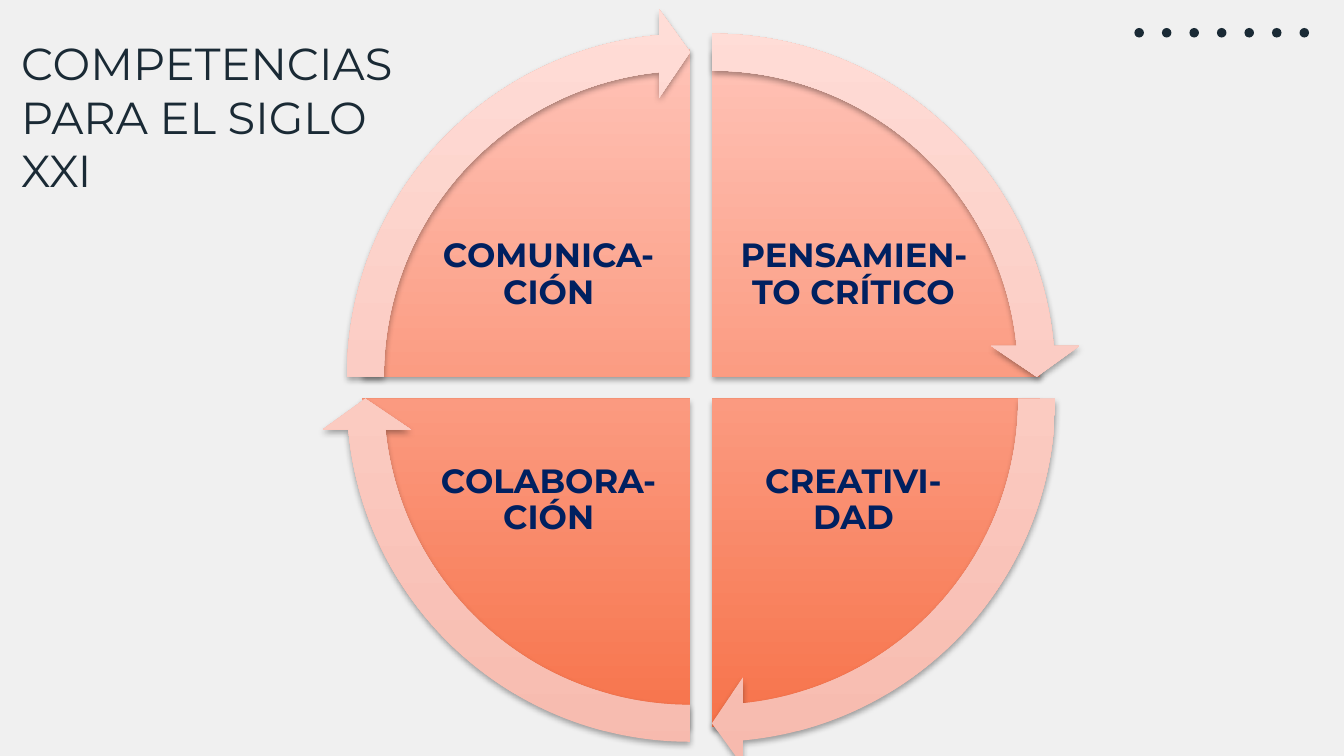
"""Build the slide on the four competences for the 21st century."""
from pptx import Presentation
from pptx.dml.color import RGBColor
from pptx.enum.shapes import MSO_SHAPE as Shape
from pptx.enum.text import MSO_ANCHOR as Anchor, MSO_AUTO_SIZE as AutoSize, PP_ALIGN as Align
from pptx.oxml import parse_xml
from pptx.oxml.ns import nsdecls
from pptx.util import Cm, Pt

BACKGROUND = RGBColor(0xF0, 0xF0, 0xF0)
INK = RGBColor(0x1A, 0x2A, 0x35)
NAVY = RGBColor(0x00, 0x20, 0x60)
PIE_COLORS = (RGBColor(0xF7, 0x73, 0x4B), RGBColor(0xFF, 0xC3, 0xB7))
ARROW_COLORS = (RGBColor(0xF7, 0xBA, 0xAE), RGBColor(0xFF, 0xDD, 0xD7))
FONT = "Montserrat"

CENTER_X, CENTER_Y, GAP = 13.25, 7.33, 0.21
PIE_SIZE, ARROW_SIZE = 12.4, 13.94
LABEL_WIDTH, LABEL_HEIGHT = 4.57, 3.4
QUARTER, FULL_TURN = 54, 216
SHADOW = (
    f'<a:effectLst {nsdecls("a")}>'
    '<a:outerShdw blurRad="40000" dist="23000" dir="5400000" rotWithShape="0">'
    '<a:srgbClr val="000000"><a:alpha val="35000"/></a:srgbClr>'
    '</a:outerShdw></a:effectLst>'
)
QUADRANTS = [
    ("PENSAMIEN-TO CRÍTICO", 1, -1, 162),
    ("CREATIVI-DAD", 1, 1, 0),
    ("COLABORA-CIÓN", -1, 1, 54),
    ("COMUNICA-CIÓN", -1, -1, 108),
]


def add_sector(kind, size, side_x, side_y, adjustments, colors):
    """Add one gradient-filled, shadowed part of the cycle."""
    left = CENTER_X + side_x * GAP - size / 2
    top = CENTER_Y + side_y * GAP - size / 2
    shape = slide.shapes.add_shape(kind, Cm(left), Cm(top), Cm(size), Cm(size))
    for index, value in enumerate(adjustments):
        shape.adjustments[index] = value
    shape.fill.gradient()
    shape.fill.gradient_angle = 90
    for stop, color in zip(shape.fill.gradient_stops, colors):
        stop.color.rgb = color
    shape.line.fill.background()
    shape._element.spPr.append(parse_xml(SHADOW))


def format_text(frame, size, color, bold, align, anchor, inset):
    """Set the layout of a text frame and the font of its paragraph."""
    frame.word_wrap = True
    frame.auto_size = AutoSize.NONE
    frame.vertical_anchor = anchor
    frame.margin_left = frame.margin_right = Cm(inset)
    frame.margin_top = frame.margin_bottom = Cm(inset)
    paragraph = frame.paragraphs[0]
    paragraph.alignment = align
    font = paragraph.runs[0].font
    font.name, font.size, font.bold = FONT, Pt(size), bold
    font.color.rgb = color


presentation = Presentation()
presentation.slide_width, presentation.slide_height = Cm(25.4), Cm(14.29)
slide = presentation.slides.add_slide(presentation.slide_layouts[5])
slide.background.fill.solid()
slide.background.fill.fore_color.rgb = BACKGROUND

title = slide.shapes.title
title.left, title.top, title.width, title.height = Cm(0.15), Cm(-1.8), Cm(8.43), Cm(5.77)
title.text_frame.text = "COMPETENCIAS PARA EL SIGLO XXI"
format_text(title.text_frame, 24, INK, False, Align.LEFT, Anchor.BOTTOM, 0.25)

for index in range(7):
    dot = slide.shapes.add_shape(
        Shape.OVAL, Cm(21.44 + index * 0.52), Cm(0.53), Cm(0.18), Cm(0.18))
    dot.shadow.inherit = False
    dot.fill.solid()
    dot.fill.fore_color.rgb = INK
    dot.line.fill.background()

for text, side_x, side_y, start in QUADRANTS:
    end = (start + QUARTER) % FULL_TURN
    add_sector(Shape.PIE, PIE_SIZE, side_x, side_y, (start, end), PIE_COLORS)
    label = slide.shapes.add_textbox(
        Cm(CENTER_X + side_x * 2.88 - LABEL_WIDTH / 2),
        Cm(CENTER_Y + side_y * 2.13 - LABEL_HEIGHT / 2),
        Cm(LABEL_WIDTH), Cm(LABEL_HEIGHT))
    label.text_frame.text = text
    label.text_frame.paragraphs[0].line_spacing = 0.9
    format_text(label.text_frame, 18, NAVY, True, Align.CENTER, Anchor.MIDDLE, 0.08)

for text, side_x, side_y, start in QUADRANTS:
    adjustments = (0.05, 3.28, start + 50.73, start, 0.06)
    add_sector(Shape.CIRCULAR_ARROW, ARROW_SIZE, side_x, side_y, adjustments, ARROW_COLORS)

presentation.save("out.pptx")
